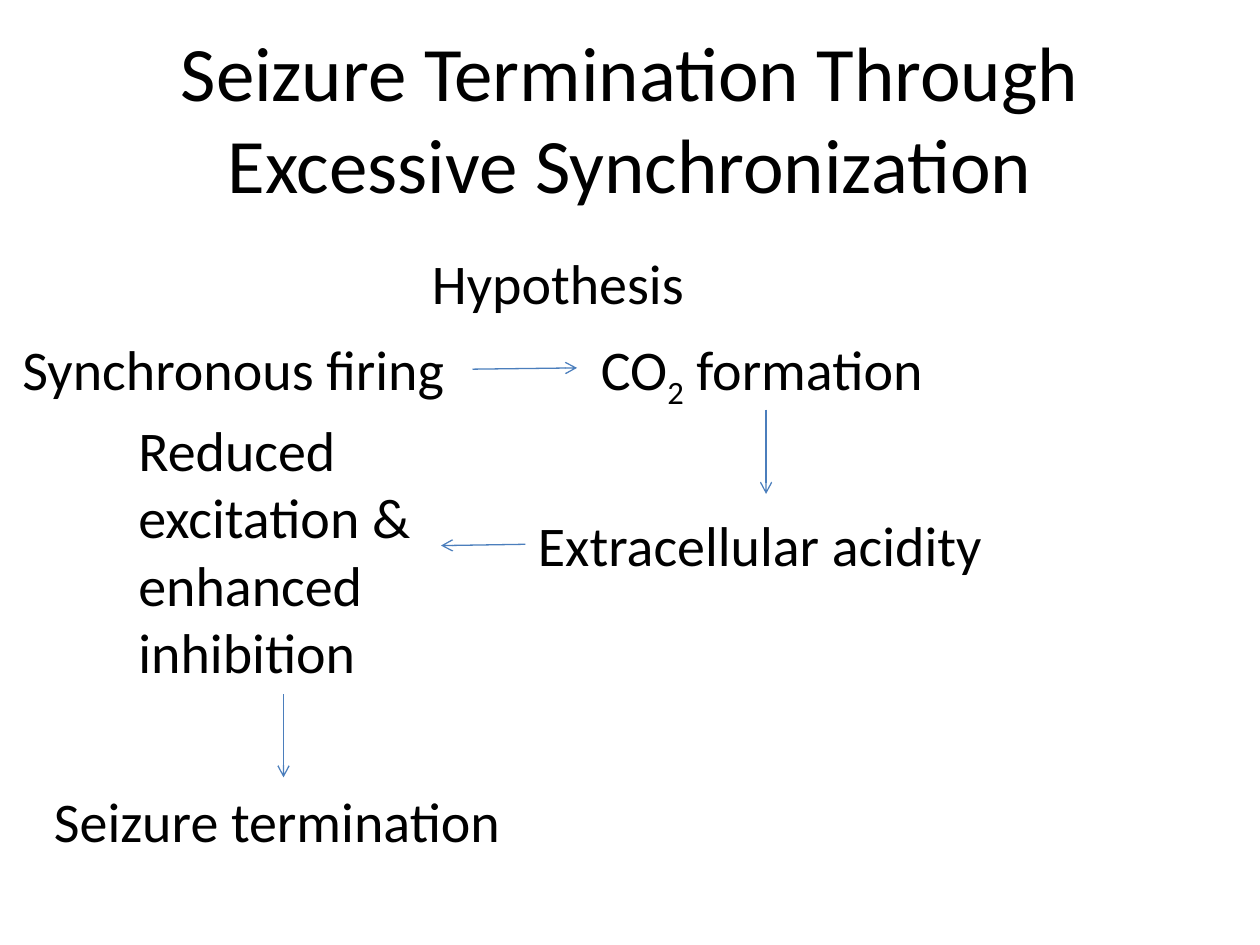
from lxml import etree
from pptx import Presentation
from pptx import util as u
from pptx.dml.color import RGBColor
from pptx.enum import shapes, text
from pptx.oxml import ns


def color(value):
    return RGBColor.from_string(value)


class Deck:
    """Hold the style and the current slide, and add its elements."""

    body = {"name": "Calibri", "size": u.Pt(32)}
    heading = {"name": "Calibri", "size": u.Pt(44)}
    ink = "000000"
    line = "4B7EBC"

    def __init__(self, prs):
        self.s = prs.slides.add_slide(prs.slide_layouts[5])

    def place(self, sp, box):
        for name, value in zip(("left", "top", "width", "height"), box):
            setattr(sp, name, u.Inches(value))

    def run(self, p, content, style):
        r = p.add_run()
        r.text = content
        for name, value in style.items():
            setattr(r.font, name, value)
        r.font.color.rgb = color(self.ink)
        return r

    def title(self, content, box):
        sp = self.s.shapes.title
        self.place(sp, box)
        tf = sp.text_frame
        for name, value in {"word_wrap": True,
                            "auto_size": text.MSO_AUTO_SIZE.NONE,
                            "vertical_anchor": text.MSO_ANCHOR.MIDDLE}.items():
            setattr(tf, name, value)
        p = tf.paragraphs[0]
        p.alignment = text.PP_ALIGN.CENTER
        self.run(p, content, self.heading)

    def label(self, content, box, subscript="", rest=""):
        sp = self.s.shapes.add_textbox(*map(u.Inches, box))
        tf = sp.text_frame
        tf.word_wrap = True
        tf.auto_size = text.MSO_AUTO_SIZE.SHAPE_TO_FIT_TEXT
        p = tf.paragraphs[0]
        self.run(p, content, self.body)
        if subscript:
            r = self.run(p, subscript, self.body)
            r._r.get_or_add_rPr().set("baseline", "-25000")
            self.run(p, rest, self.body)

    def arrow(self, *ends):
        cxn = self.s.shapes.add_connector(
            shapes.MSO_CONNECTOR.STRAIGHT, *map(u.Inches, ends))
        cxn.line.color.rgb = color(self.line)
        cxn.line.width = u.Pt(0.75)
        ln = cxn.line._get_or_add_ln()
        etree.SubElement(ln, ns.qn("a:tailEnd"), type="arrow")
        etree.SubElement(cxn._element.spPr, ns.qn("a:effectLst"))


def main():
    prs = Presentation()
    prs.slide_width, prs.slide_height = u.Inches(10), u.Inches(7.5)
    deck = Deck(prs)
    row = 0.64

    deck.title("Seizure Termination Through Excessive Synchronization",
               (0.5, 0.3, 9, 1.25))
    deck.label("Synchronous firing", (0.08, 2.61, 3.67, row))
    deck.arrow(3.75, 2.93, 4.58, 2.92)
    deck.label("CO", (4.67, 2.61, 2.83, row), "2", " formation")
    deck.arrow(6.08, 3.25, 6.08, 3.92)
    deck.label("Extracellular acidity", (4.17, 4, 3.83, row))
    deck.arrow(4.17, 4.32, 3.5, 4.33)
    deck.label("Reduced excitation & enhanced inhibition", (1, 3.25, 2.5, 2.26))
    deck.arrow(2.25, 5.51, 2.25, 6.17)
    deck.label("Seizure termination", (0.33, 6.19, 3.92, row))
    deck.label("Hypothesis", (3.33, 1.92, 2.33, row))
    prs.save("out.pptx")


if __name__ == "__main__":
    main()
